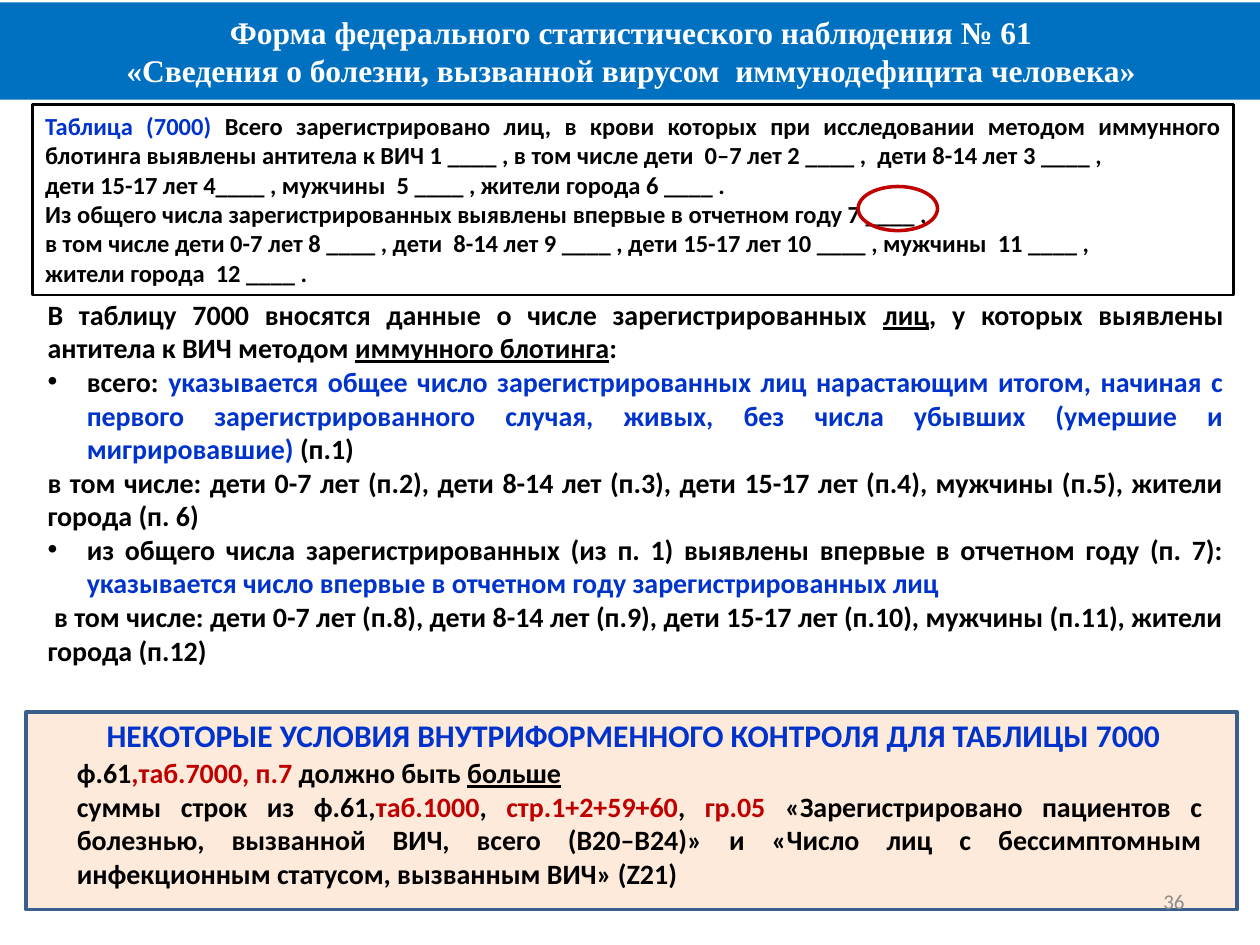
from dataclasses import dataclass

from lxml import etree
from pptx import Presentation
from pptx.dml.color import RGBColor
from pptx.enum.shapes import MSO_SHAPE
from pptx.enum.text import MSO_ANCHOR, PP_ALIGN
from pptx.oxml.ns import qn
from pptx.util import Cm, Pt

RECT, OVAL = MSO_SHAPE.RECTANGLE, MSO_SHAPE.OVAL
TOP, MIDDLE = MSO_ANCHOR.TOP, MSO_ANCHOR.MIDDLE
CENTER, RIGHT, JUSTIFY = PP_ALIGN.CENTER, PP_ALIGN.RIGHT, PP_ALIGN.JUSTIFY


@dataclass(frozen=True)
class Theme:
    body_font: str = "Calibri"
    title_font: str = "Times New Roman"
    white: str = "FFFFFF"
    black: str = "000000"
    banner: str = "0070C0"
    blue: str = "0033CC"
    red: str = "C00000"
    peach: str = "FDEADA"
    frame: str = "3A5F8C"
    grey: str = "8C8C8C"
    heading_size: int = 18
    body_size: int = 16
    form_size: int = 14
    number_size: int = 12
    bullet_indent: float = 0.79


THEME = Theme()


def rgb(value):
    return RGBColor.from_string(value)


def plain(text):
    return text, THEME.black, False


def blue(text):
    return text, THEME.blue, False


def red(text):
    return text, THEME.red, False


def underlined(text):
    return text, THEME.black, True


def inside(box, dx, dy, width, height):
    """Box placed relative to the corner of another box."""
    return box[0] + dx, box[1] + dy, width, height


def add_panel(slide, kind, box, fill=None, line=None, weight=1.5):
    panel = slide.shapes.add_shape(kind, *map(Cm, box))
    panel.shadow.inherit = False
    if fill:
        panel.fill.solid()
        panel.fill.fore_color.rgb = rgb(fill)
    else:
        panel.fill.background()
    if line:
        panel.line.color.rgb = rgb(line)
        panel.line.width = Pt(weight)
    else:
        panel.line.fill.background()
    return panel


def add_bullet(paragraph):
    properties = paragraph._p.get_or_add_pPr()
    indent = Cm(THEME.bullet_indent)
    properties.set("marL", str(indent))
    properties.set("indent", str(-indent))
    etree.SubElement(properties, qn("a:buFont")).set("typeface", "Arial")
    etree.SubElement(properties, qn("a:buChar")).set("char", "•")


def write(shape, paragraphs, size, align=JUSTIFY, anchor=TOP,
          font=THEME.body_font, bold=True, bullets=()):
    frame = shape.text_frame
    frame.word_wrap = True
    frame.vertical_anchor = anchor
    for index, parts in enumerate(paragraphs):
        paragraph = frame.add_paragraph() if index else frame.paragraphs[0]
        paragraph.alignment = align
        if index in bullets:
            add_bullet(paragraph)
        for text, color, underline in parts:
            run = paragraph.add_run()
            run.text = text
            run.font.name = font
            run.font.size = Pt(size)
            run.font.bold = bold
            run.font.color.rgb = rgb(color)
            if underline:
                run.font.underline = True


def add_text(slide, box, paragraphs, size, **style):
    write(slide.shapes.add_textbox(*map(Cm, box)), paragraphs, size, **style)


def title_banner(slide, box):
    lines = [
        "Форма федерального статистического наблюдения № 61",
        " «Сведения о болезни, вызванной вирусом  иммунодефицита человека» ",
    ]
    banner = add_panel(slide, RECT, box, fill=THEME.banner)
    write(banner, [[(line, THEME.white, False)] for line in lines],
          THEME.heading_size, align=CENTER, anchor=MIDDLE, font=THEME.title_font)


def form_extract(slide, box):
    form = add_panel(slide, RECT, box, line=THEME.black)
    write(form, [
        [blue("Таблица (7000) "),
         plain("Всего зарегистрировано лиц, в крови которых при исследовании методом "
               "иммунного блотинга выявлены антитела к ВИЧ 1 ____ , "
               "в том числе дети  0–7 лет 2 ____ ,  дети 8-14 лет 3 ____ , ")],
        [plain("дети 15-17 лет 4____ , мужчины  5 ____ , жители города 6 ____ .")],
        [plain("Из общего числа зарегистрированных выявлены впервые "
               "в отчетном году 7 ____ , ")],
        [plain("в том числе дети 0-7 лет 8 ____ , дети  8-14 лет 9 ____ , "
               "дети 15-17 лет 10 ____ , мужчины  11 ____ , ")],
        [plain("жители города  12 ____ .")],
    ], THEME.form_size)
    # Ring around item 7
    add_panel(slide, OVAL, inside(box, 16.64, 1.65, 1.6, 0.89),
              line=THEME.red, weight=2)


def filling_rules(slide, box):
    add_text(slide, box, [
        [plain("В таблицу 7000 вносятся данные о числе зарегистрированных "),
         underlined("лиц"),
         plain(", у которых выявлены антитела к ВИЧ методом "),
         underlined("иммунного блотинга"), plain(": ")],
        [plain("всего: "),
         blue("указывается общее число зарегистрированных лиц нарастающим итогом, "
              "начиная с первого зарегистрированного случая, живых, "
              "без числа убывших (умершие и мигрировавшие) "),
         plain("(п.1)")],
        [plain("в том числе: дети 0-7 лет (п.2), дети 8-14 лет (п.3), "
               "дети 15-17 лет (п.4), мужчины (п.5), жители города (п. 6)")],
        [plain("из общего числа зарегистрированных (из п. 1) выявлены впервые "
               "в отчетном году (п. 7): "),
         blue("указывается число впервые в отчетном году зарегистрированных лиц")],
        [plain(" в том числе: дети 0-7 лет (п.8), дети 8-14 лет (п.9), "
               "дети 15-17 лет (п.10), мужчины (п.11), жители города (п.12)")],
    ], THEME.body_size, bullets=(1, 3))


def control_conditions(slide, box):
    add_panel(slide, RECT, box, fill=THEME.peach, line=THEME.frame, weight=2)
    # Conditions
    add_text(slide, inside(box, 0.77, 0.76, 23.19, 3), [
        [plain("ф.61"), red(",таб.7000, п.7"), plain(" должно быть "),
         underlined("больше"), plain(" ")],
        [plain("суммы строк из ф.61,"), red("таб.1000"), plain(", "),
         red("стр.1+2+59+60"), plain(", "), red("гр.05"),
         plain(" «Зарегистрировано пациентов с болезнью, вызванной ВИЧ, "
               "всего (В20–В24)» и «Число лиц с бессимптомным инфекционным "
               "статусом, вызванным ВИЧ» (Z21) ")],
    ], THEME.body_size)
    # Heading
    add_text(slide, inside(box, 0.08, -0.05, 24.33, 1.02),
             [[blue("НЕКОТОРЫЕ УСЛОВИЯ ВНУТРИФОРМЕННОГО КОНТРОЛЯ ДЛЯ ТАБЛИЦЫ 7000")]],
             THEME.heading_size, align=CENTER)


def page_number(slide, box):
    add_text(slide, box, [[("36", THEME.grey, False)]], THEME.number_size,
             align=RIGHT, anchor=MIDDLE, bold=False)


def main():
    deck = Presentation()
    deck.slide_width, deck.slide_height = Cm(25.4), Cm(19.05)
    slide = deck.slides.add_slide(deck.slide_layouts[6])
    title_banner(slide, (0, 0.05, 25.45, 1.96))
    form_extract(slide, (0.66, 2.11, 24.21, 3.84))
    filling_rules(slide, (0.71, 5.87, 24.21, 7.77))
    control_conditions(slide, (0.53, 14.35, 24.41, 3.99))
    page_number(slide, (18.21, 17.65, 5.92, 1.02))
    deck.save("out.pptx")


if __name__ == "__main__":
    main()
